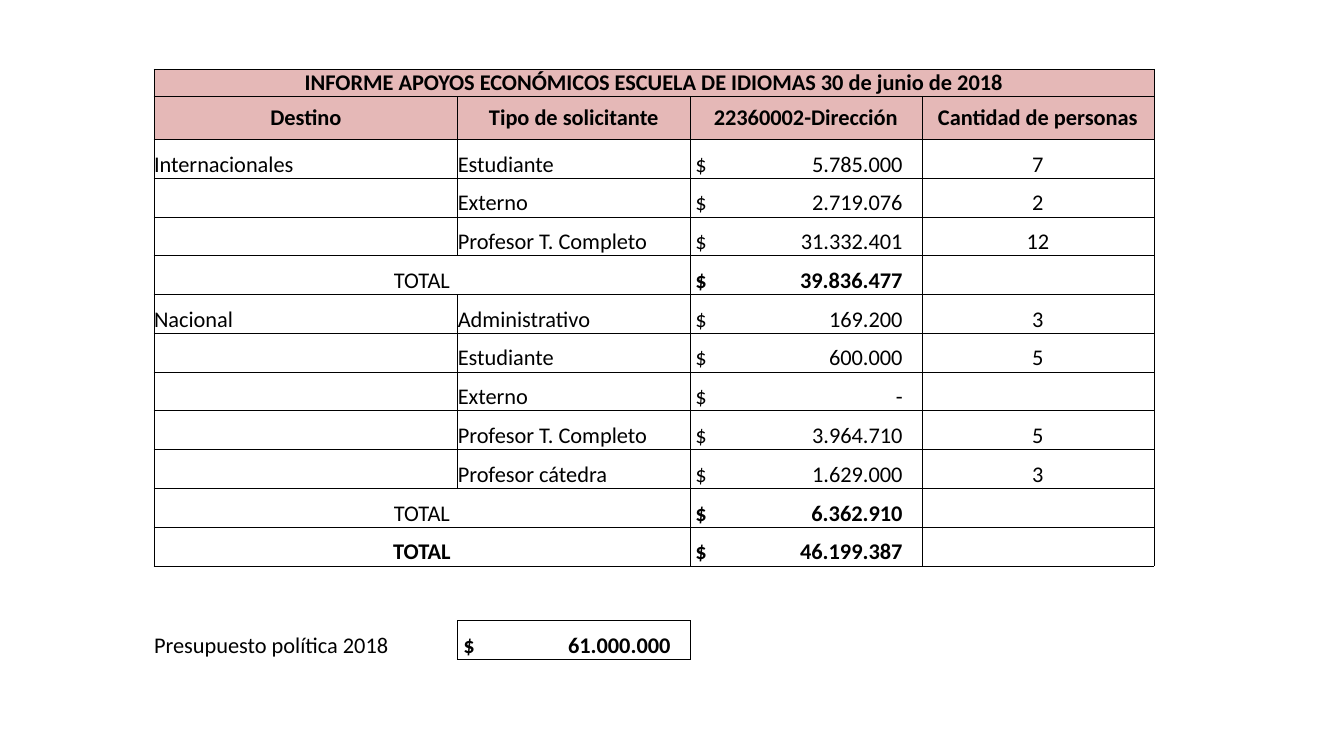
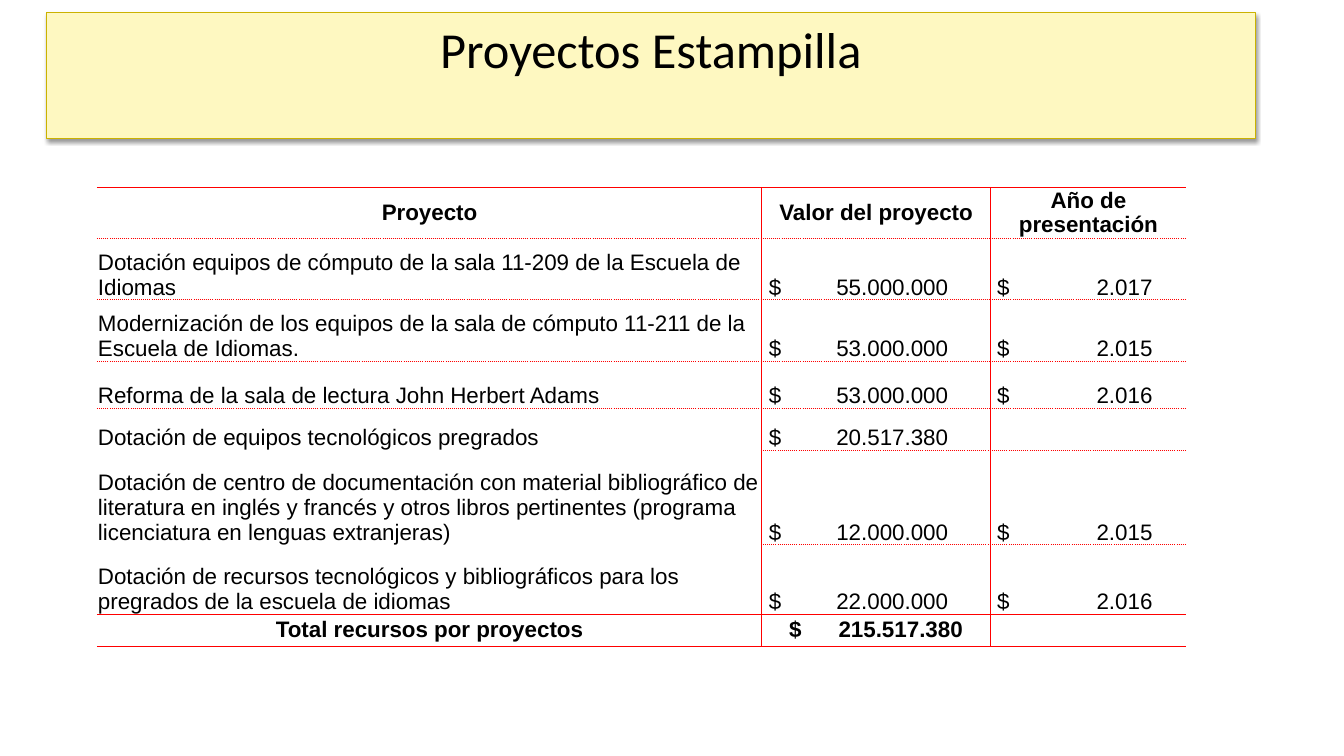
from dataclasses import dataclass
from lxml.etree import SubElement as Sub
from pptx import Presentation
from pptx.dml.color import RGBColor as Rgb
from pptx.enum.shapes import MSO_SHAPE as Form
from pptx.enum.text import MSO_ANCHOR as Anchor, PP_ALIGN as Align
from pptx.oxml.ns import qn
from pptx.util import Pt


@dataclass(frozen=True)
class Theme:
    ink: str = "000000"
    white: str = "FFFFFF"
    rose: str = "E5B8B7"
    red: str = "FF0000"
    cream: str = "FEF8C1"
    gold: str = "CBB200"
    body: int = 16
    head: int = 36
    sans: str = "Calibri"
    plain: str = "Arial"


THEME = Theme()


def dress(item, form):
    for name, value in form.items():
        setattr(item, name, value)


class Deck:
    def __init__(self, wide, high):
        self.file = Presentation()
        dress(self.file, dict(slide_width=Pt(wide), slide_height=Pt(high)))
        self.slide = None

    def page(self):
        self.slide = self.file.slides.add_slide(self.file.slide_layouts[6])

    def label(self, para, text, font, size, bold=False, align=Align.LEFT):
        para.alignment = align
        run = para.add_run()
        run.text = text
        dress(run.font, dict(name=font, size=Pt(size), bold=bold))
        run.font.color.rgb = Rgb.from_string(THEME.ink)

    def banner(self, text, left, top, wide, high):
        box = self.slide.shapes.add_shape(
            Form.RECTANGLE, Pt(left), Pt(top), Pt(wide), Pt(high))
        box.fill.solid()
        box.fill.fore_color.rgb = Rgb.from_string(THEME.cream)
        box.line.color.rgb = Rgb.from_string(THEME.gold)
        box.line.width = Pt(0.75)
        box.shadow.inherit = False
        glow = Sub(box._element.spPr.find(qn("a:effectLst")), qn("a:outerShdw"),
                   blurRad=str(Pt(3.1)), dist=str(Pt(1.6)), dir="5400000", rotWithShape="0")
        shade = Sub(glow, qn("a:srgbClr"), val=THEME.ink)
        Sub(shade, qn("a:alpha"), val="38000")
        frame = box.text_frame
        dress(frame, dict(word_wrap=True, vertical_anchor=Anchor.TOP, margin_top=Pt(4)))
        self.label(frame.paragraphs[0], text, THEME.sans, THEME.head, align=Align.CENTER)

    def edge(self, cell, side, dash, color, width):
        line = Sub(cell._tc.get_or_add_tcPr(), qn("a:ln" + side), w=str(Pt(width)))
        if dash:
            fill = Sub(line, qn("a:solidFill"))
            Sub(fill, qn("a:srgbClr"), val=color)
            Sub(line, qn("a:prstDash"), val=dash)
        else:
            Sub(line, qn("a:noFill"))

    def table(self, rows, left, top, wides, highs, look, across, down, pen, font, spans=()):
        grid = self.slide.shapes.add_table(
            len(highs), len(wides), Pt(left), Pt(top), Pt(sum(wides)), Pt(sum(highs))).table
        dress(grid, dict(first_row=False, horz_banding=False))
        for col, wide in zip(grid.columns, wides):
            col.width = Pt(wide)
        for row, high in zip(grid.rows, highs):
            row.height = Pt(high)
        for r, c, last in spans:
            grid.cell(r, c).merge(grid.cell(r, last))
        for r, row in enumerate(rows):
            for c, text in enumerate(row):
                sides = dict(L=down(r, c), R=down(r, c + 1), T=across(r, c), B=across(r + 1, c))
                self.cell(grid.cell(r, c), text, sides, pen, font, **look(r, c))

    def cell(self, cell, text, sides, pen, font, fill=THEME.white, anchor=Anchor.BOTTOM,
             bold=False, align=Align.LEFT, inset=0, stop=0):
        dress(cell, dict(vertical_anchor=anchor, margin_left=Pt(inset), margin_right=Pt(0),
                         margin_top=Pt(0), margin_bottom=Pt(0)))
        for side, dash in sides.items():
            self.edge(cell, side, dash, *pen)
        cell.fill.solid()
        cell.fill.fore_color.rgb = Rgb.from_string(fill)
        para = cell.text_frame.paragraphs[0]
        if not text:
            Sub(para._p, qn("a:endParaRPr"), sz=str(THEME.body * 100))
            return
        self.label(para, text, font, THEME.body, bold, align)
        if stop:
            tabs = Sub(para._p.get_or_add_pPr(), qn("a:tabLst"))
            Sub(tabs, qn("a:tab"), pos=str(Pt(stop)), algn="r")


def grants(deck):
    rows = [
        ("INFORME APOYOS ECONÓMICOS ESCUELA DE IDIOMAS 30 de junio de 2018", "", "", ""),
        ("Destino", "Tipo de solicitante", "22360002-Dirección", "Cantidad de personas"),
        ("Internacionales", "Estudiante", "$\t5.785.000", "7"),
        ("", "Externo", "$\t2.719.076", "2"),
        ("", "Profesor T. Completo", "$\t31.332.401", "12"),
        ("TOTAL", "", "$\t39.836.477", ""),
        ("Nacional", "Administrativo", "$\t169.200", "3"),
        ("", "Estudiante", "$\t600.000", "5"),
        ("", "Externo", "$\t-", ""),
        ("", "Profesor T. Completo", "$\t3.964.710", "5"),
        ("", "Profesor cátedra", "$\t1.629.000", "3"),
        ("TOTAL", "", "$\t6.362.910", ""),
        ("TOTAL", "", "$\t46.199.387", ""),
        ("", "", "", ""),
        ("", "", "", ""),
        ("Presupuesto política 2018", "$\t61.000.000", "", ""),
    ]
    sums = [r for r, row in enumerate(rows) if row[0] == "TOTAL"]
    last = len(rows) - 1

    def look(r, c):
        if r < 2:
            return dict(fill=THEME.rose, bold=True, align=Align.CENTER,
                        anchor=Anchor.MIDDLE if r else Anchor.BOTTOM)
        if rows[r][c].startswith("$"):
            return dict(inset=4, stop=148, bold=r in sums or r == last)
        mid = c == 3 or r in sums
        return dict(align=Align.CENTER if mid else Align.LEFT, bold=r == sums[-1])

    def boxed(r, c):
        return 0 <= r <= sums[-1] and 0 <= c < 4 or (r, c) == (last, 1)

    def across(y, c):
        return "solid" if boxed(y - 1, c) or boxed(y, c) else None

    def down(r, x):
        return "solid" if boxed(r, x - 1) or boxed(r, x) else None

    deck.page()
    deck.table(rows, 110, 49.5, [217] + [165.75] * 3,
               [19.5, 30.5] + [27.7] * 11 + [19.5] * 2 + [27.7],
               look, across, down, (THEME.ink, 0.5), THEME.sans,
               [(0, 0, 3)] + [(r, 0, 1) for r in sums])


def projects(deck):
    rows = [
        ("Proyecto", "Valor del proyecto", "Año de presentación"),
        ("Dotación equipos de cómputo de la sala 11-209 de la Escuela de Idiomas",
         "$\t55.000.000", "$\t2.017"),
        ("Modernización de los equipos de la sala de cómputo 11-211 de la Escuela de Idiomas.",
         "$\t53.000.000", "$\t2.015"),
        ("Reforma de la sala de lectura John Herbert Adams", "$\t53.000.000", "$\t2.016"),
        ("Dotación de equipos tecnológicos pregrados", "$\t20.517.380", ""),
        ("Dotación de centro de documentación con material bibliográfico de literatura en "
         "inglés y francés y otros libros pertinentes (programa licenciatura en lenguas "
         "extranjeras)", "$\t12.000.000", "$\t2.015"),
        ("Dotación de recursos tecnológicos y bibliográficos para los pregrados de la escuela "
         "de idiomas", "$\t22.000.000", "$\t2.016"),
        ("Total recursos por proyectos", "$\t215.517.380", ""),
    ]
    last = len(rows) - 1

    def look(r, c):
        if r == last and c == 1:
            return dict(bold=True, anchor=Anchor.MIDDLE, inset=20, stop=124)
        if r in (0, last):
            return dict(bold=True, anchor=Anchor.MIDDLE, align=Align.CENTER, inset=0.75)
        return [dict(inset=0.75), dict(inset=5.5, stop=128), dict(inset=5, stop=111)][c]

    def across(y, c):
        if y in (0, last, last + 1):
            return "solid"
        return None if c == 0 and y in (5, 6) else "sysDot"

    def down(r, x):
        return "solid" if x in (1, 2) else None

    deck.page()
    deck.table(rows, 69.25, 133.75, [474.5, 163.5, 139.75],
               [36.5, 44, 44, 33.5, 30, 67.5, 49.5, 23],
               look, across, down, (THEME.red, 0.75), THEME.plain)
    deck.banner("Proyectos Estampilla", 33, 8.75, 864, 90)


def main():
    deck = Deck(960, 540)
    grants(deck)
    projects(deck)
    deck.file.save("out.pptx")


if __name__ == "__main__":
    main()
